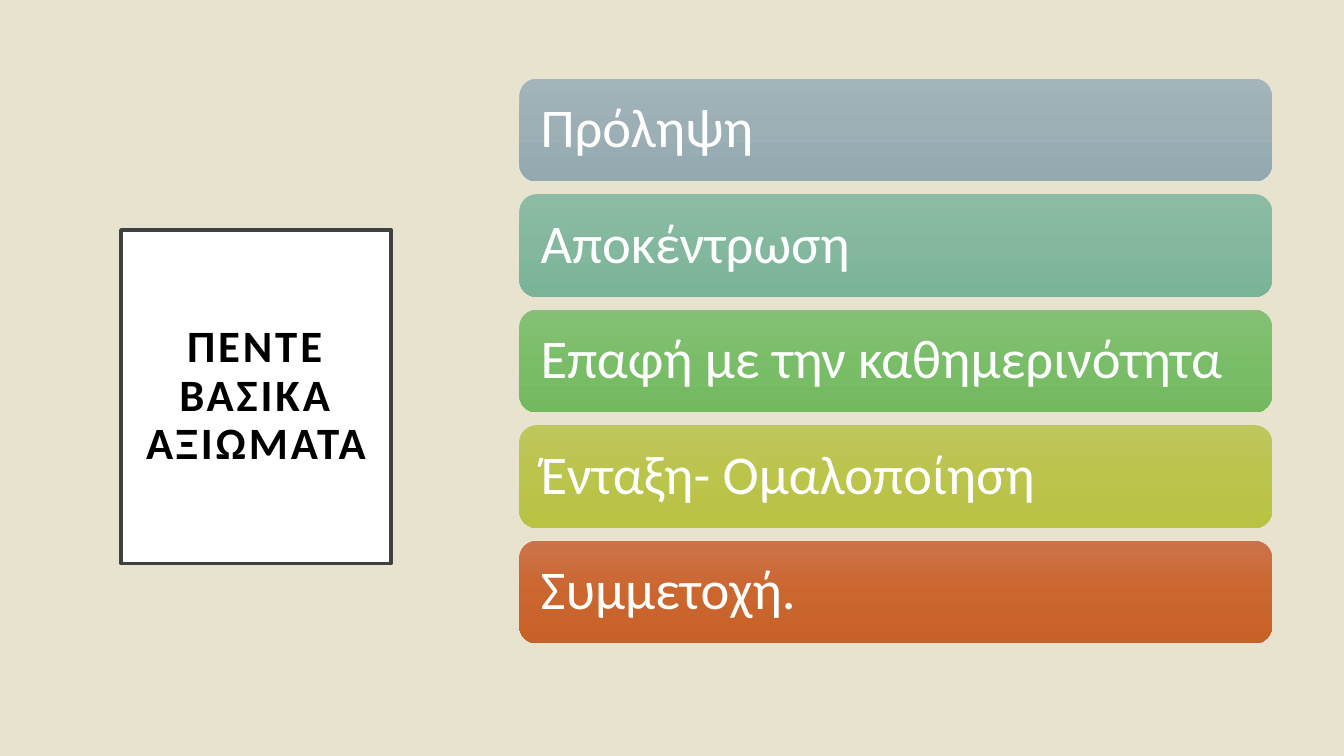
import copy
import pptx
import pptx.util
import pptx.dml.color
import pptx.enum.shapes
import pptx.enum.text
import pptx.oxml.ns

Pt = pptx.util.Pt
RGB = pptx.dml.color.RGBColor
Align = pptx.enum.text.PP_ALIGN
qn = pptx.oxml.ns.qn

# Content: each axiom with its top, middle and bottom colour
TITLE = "Πέντε βασικά αξιώματα"
AXIOMS = [
    ("Πρόληψη", ("A3B5BB", "9BAFB5", "93A9AF")),
    ("Αποκέντρωση", ("8DBCA5", "83B89E", "7BB398")),
    ("Επαφή με την καθημερινότητα", ("85C076", "7ABD68", "73B960")),
    ("Ένταξη- Ομαλοποίηση", ("BEC65E", "BBC44B", "B8C243")),
    ("Συμμετοχή.", ("CC734B", "CB662F", "C86128")),
]
SAND = RGB(0xE8, 0xE3, 0xCE)
WHITE = RGB(0xFF, 0xFF, 0xFF)
BLACK = RGB(0, 0, 0)
GREY = RGB(0x40, 0x40, 0x40)

# Layout in points
LEFT, TOP, WIDTH, HEIGHT, STEP = 371, 56.2, 537.6, 73.4, 82.5


def write(shape, text, size, color, align, inset):
    frame = shape.text_frame
    frame.word_wrap = True
    frame.auto_size = pptx.enum.text.MSO_AUTO_SIZE.NONE
    frame.vertical_anchor = pptx.enum.text.MSO_ANCHOR.MIDDLE
    frame.margin_left = frame.margin_right = Pt(inset)
    frame.margin_top = frame.margin_bottom = Pt(inset)
    para = frame.paragraphs[0]
    para.alignment = align
    para.line_spacing = 0.9
    para.space_before = Pt(0)
    run = para.add_run()
    run.text = text
    run.font.name = "Calibri"
    run.font.size = Pt(size)
    run.font.color.rgb = color
    return run


def shade(shape, colors):
    shape.fill.gradient()
    shape.fill.gradient_angle = 270
    stops = shape._element.spPr.find(qn("a:gradFill")).find(qn("a:gsLst"))
    stops.insert(1, copy.deepcopy(stops[0]))
    for i, (stop, color) in enumerate(zip(shape.fill.gradient_stops, colors)):
        stop.position = i / 2
        stop.color.rgb = RGB.from_string(color)


deck = pptx.Presentation()
deck.slide_width, deck.slide_height = Pt(960), Pt(540)
slide = deck.slides.add_slide(deck.slide_layouts[5])
slide.background.fill.solid()
slide.background.fill.fore_color.rgb = SAND

# Framed title
title = slide.shapes.title
title.left, title.top, title.width, title.height = map(Pt, (86.4, 164.2, 193, 238.3))
title.fill.solid()
title.fill.fore_color.rgb = WHITE
title.line.color.rgb = GREY
title.line.width = Pt(2.5)
run = write(title, TITLE, 32, BLACK, Align.CENTER, 14.4)
run.font.bold = True
props = run._r.get_or_add_rPr()
props.set("cap", "all")
props.set("spc", "200")

# Stack of axiom bars
for row, (text, colors) in enumerate(AXIOMS):
    bar = slide.shapes.add_shape(
        pptx.enum.shapes.MSO_SHAPE.ROUNDED_RECTANGLE,
        Pt(LEFT), Pt(TOP + row * STEP), Pt(WIDTH), Pt(HEIGHT))
    bar.shadow.inherit = False
    bar.line.fill.background()
    shade(bar, colors)
    write(bar, text, 39, WHITE, Align.LEFT, 11.5)

deck.save("out.pptx")
